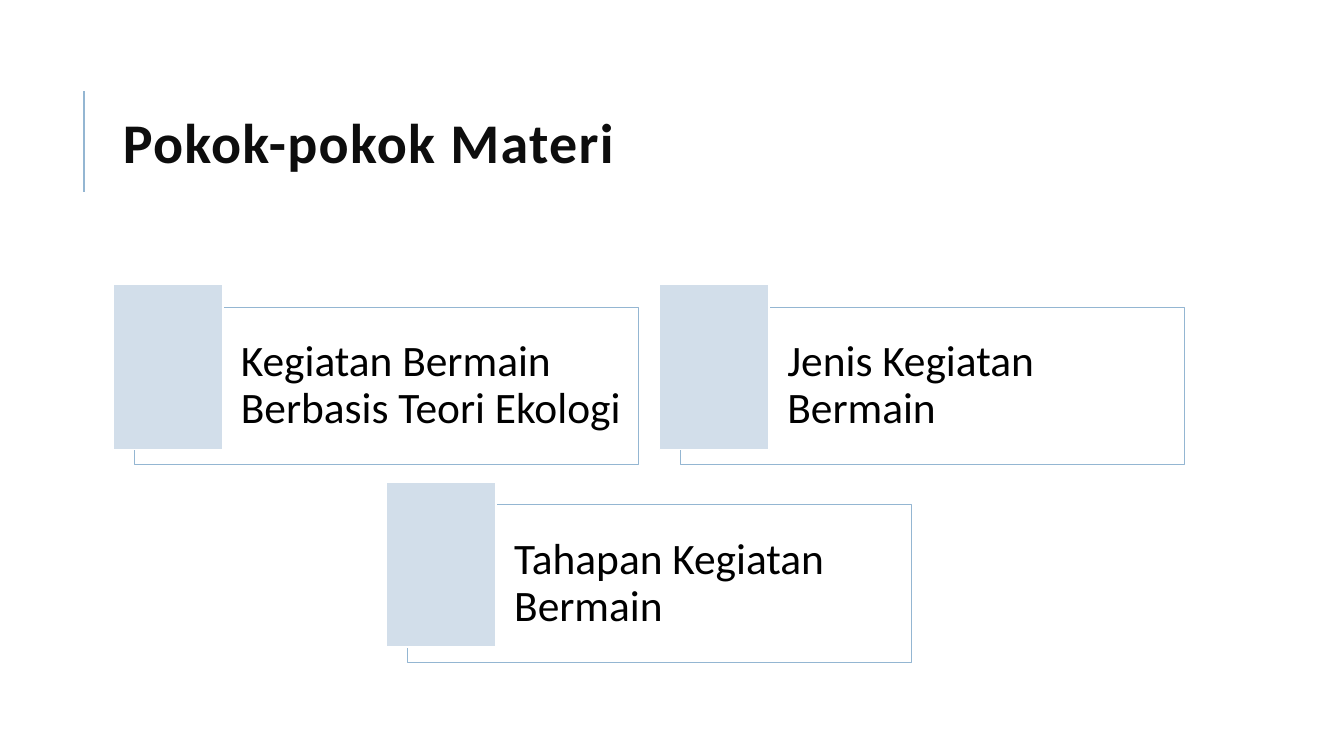
"""Builds the slide that lists the three main topics of the lesson."""
from lxml import etree
from pptx import Presentation
from pptx import util as u
from pptx.dml.color import RGBColor
from pptx.enum import shapes, text
from pptx.oxml.ns import qn

COLORS = {"title": "0D0D0D", "body": "000000", "white": "FFFFFF",
          "line": "94B6D2", "block": "D2DEEA"}
CARD_WIDTH, CARD_HEIGHT = 5, 1.56
BLOCK_WIDTH, BLOCK_HEIGHT = 1.09, 1.64
BLOCK_SHIFT_X, BLOCK_SHIFT_Y = 0.21, 0.23


def write_text(shape, words, size, color, line_spacing, margins, bold=False, tracking=0):
    frame = shape.text_frame
    frame.word_wrap = True
    frame.vertical_anchor = text.MSO_ANCHOR.MIDDLE
    frame.margin_left, frame.margin_top, frame.margin_right, frame.margin_bottom = map(u.Inches, margins)
    para = frame.paragraphs[0]
    para.alignment = text.PP_ALIGN.LEFT
    para.line_spacing = line_spacing
    span = para.add_run()
    span.text = words
    span.font.name = "Calibri"
    span.font.size = u.Pt(size)
    span.font.bold = bold
    span.font.color.rgb = RGBColor.from_string(COLORS[color])
    if tracking:
        span.font._element.set("spc", str(tracking * 100))


def add_box(left, top, width, height, fill, line, line_width):
    box = page.shapes.add_shape(shapes.MSO_SHAPE.RECTANGLE, u.Inches(left), u.Inches(top),
                                u.Inches(width), u.Inches(height))
    box.shadow.inherit = False
    box.fill.solid()
    box.fill.fore_color.rgb = RGBColor.from_string(COLORS[fill])
    box.line.color.rgb = RGBColor.from_string(COLORS[line])
    box.line.width = u.Pt(line_width)
    return box


deck = Presentation()
deck.slide_width, deck.slide_height = u.Inches(13.33), u.Inches(7.5)
page = deck.slides.add_slide(deck.slide_layouts[6])

rule = page.shapes.add_connector(shapes.MSO_CONNECTOR.STRAIGHT, u.Inches(0.83), u.Inches(1.9),
                                 u.Inches(0.83), u.Inches(0.9))
rule.line.color.rgb = RGBColor.from_string(COLORS["line"])
rule.line.width = u.Pt(1.5)
etree.SubElement(rule._element.spPr, qn("a:effectLst"))

title = page.shapes.add_textbox(u.Inches(1.12), u.Inches(0.64), u.Inches(10.63), u.Inches(1.64))
write_text(title, "Pokok-pokok Materi", size=40, color="title", line_spacing=0.8,
           margins=(0.1, 0.05, 0.1, 0.05), bold=True, tracking=1)

topics = [
    ("Kegiatan Bermain Berbasis Teori Ekologi", 1.33, 3.05),
    ("Jenis Kegiatan Bermain", 6.75, 3.05),
    ("Tahapan Kegiatan Bermain", 4.04, 5.01),
]
for topic, left, top in topics:
    card = add_box(left, top, CARD_WIDTH, CARD_HEIGHT, "white", "line", 0.75)
    fill_color = card._element.spPr.find(qn("a:solidFill")).find(qn("a:srgbClr"))
    etree.SubElement(fill_color, qn("a:alpha"), val="40000")
    write_text(card, topic, size=31, color="body", line_spacing=0.9, margins=(1.06, 0.13, 0.13, 0.13))
    add_box(left - BLOCK_SHIFT_X, top - BLOCK_SHIFT_Y, BLOCK_WIDTH, BLOCK_HEIGHT, "block", "white", 1.25)

deck.save("out.pptx")
